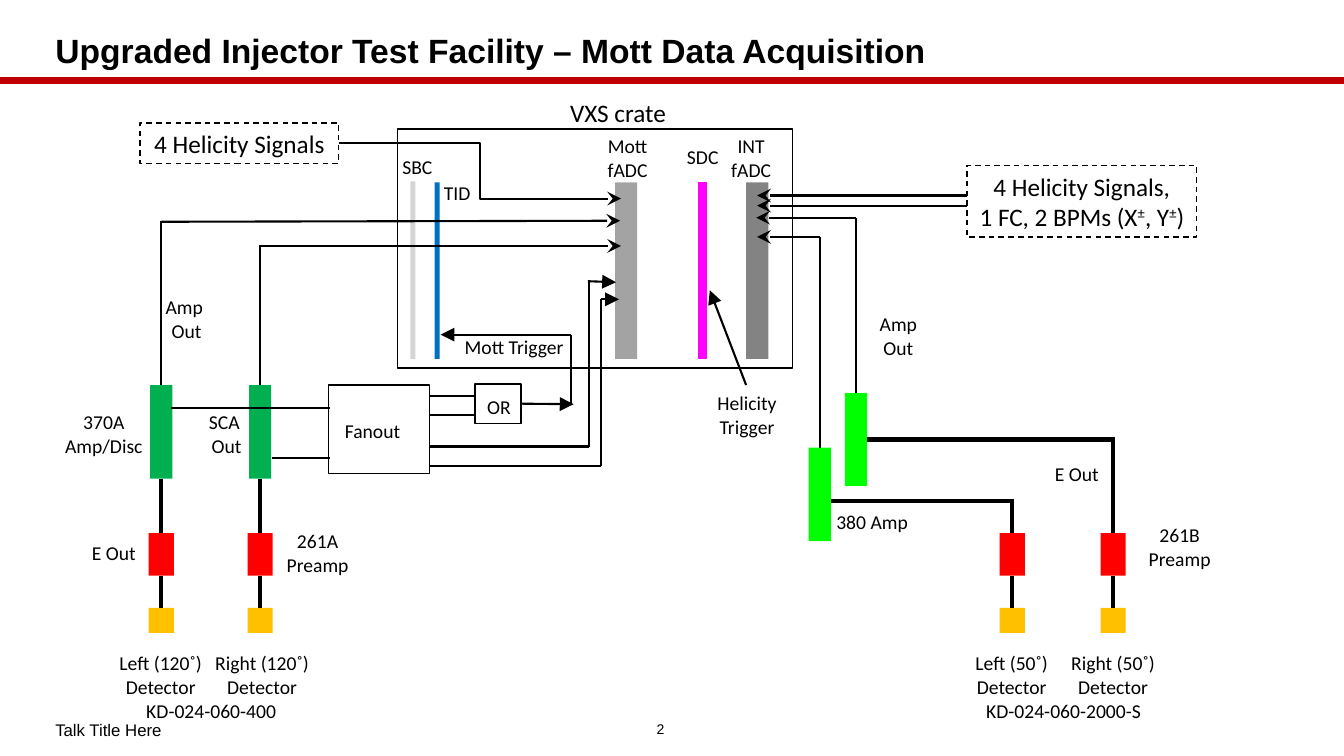
"""Build the Mott data acquisition wiring slide."""
from lxml.etree import SubElement
from pptx import Presentation
from pptx.dml.color import RGBColor
from pptx.enum.dml import MSO_LINE
from pptx.enum.shapes import MSO_CONNECTOR, MSO_SHAPE
from pptx.enum.text import MSO_ANCHOR, PP_ALIGN
from pptx.oxml.ns import qn
from pptx.util import Inches, Pt

TITLE = "Upgraded Injector Test Facility – Mott Data Acquisition"
COLORS = {
    "black": "000000", "rule": "C00000", "gold": "FFC000", "red": "FF0000",
    "green": "00B050", "lime": "00FF00", "pale": "D5D5D5", "gray": "A3A3A3",
    "dark": "838383", "blue": "0070C0", "pink": "FF00FF",
}
TOP, RIGHT, BOTTOM = 0, 3, 2

CENTERS = [1.6, 2.58, 10.04, 11.04]
BOXES = {
    "crate": (3.94, 1.28, 3.92, 2.37, None),
    "sbc": (4.07, 1.8, 0.05, 1.76, "pale"),
    "tid": (4.31, 1.81, 0.05, 1.75, "blue"),
    "mott": (6.1, 1.81, 0.22, 1.75, "gray"),
    "sdc": (6.93, 1.81, 0.08, 1.75, "pink"),
    "int": (7.4, 1.81, 0.22, 1.75, "dark"),
    "fanout": (3.26, 3.82, 1, 0.88, None),
    "or": (4.71, 3.81, 0.46, 0.39, None),
    "disc0": (1.49, 3.82, 0.22, 0.93, "green"),
    "disc1": (2.47, 3.82, 0.22, 0.93, "green"),
    "amp2": (8.02, 4.44, 0.22, 0.93, "lime"),
    "amp3": (8.38, 3.9, 0.22, 0.92, "lime"),
}
for i, x in enumerate(CENTERS):
    BOXES[f"pre{i}"] = (x - 0.125, 5.29, 0.25, 0.42, "red")
    BOXES[f"det{i}"] = (x - 0.125, 6.03, 0.25, 0.25, "gold")

SIGNALS = {
    "helicity": (1.39, 1.22, 1.97, 0.4, "4 Helicity Signals"),
    "beam": (9.59, 1.64, 2.28, 0.71,
             "4 Helicity Signals,\n1 FC, 2 BPMs (X±, Y±)"),
}
LABELS = [
    (3.89, 1.49, 0.5, "SBC"), (4.3, 1.75, 0.47, "TID"),
    (5.92, 1.28, 0.61, "Mott\nfADC"), (6.71, 1.39, 0.52, "SDC"),
    (7.14, 1.28, 0.62, "INT\nfADC"), (4.48, 3.27, 1.24, "Mott Trigger"),
    (7.01, 3.83, 0.8, "Helicity\nTrigger"), (3.29, 4.11, 0.81, "Fanout"),
    (4.7, 3.87, 0.5, "OR"), (1.54, 2.88, 0.62, "Amp \nOut"),
    (0.54, 4.02, 0.98, "370A\nAmp/Disc"), (1.95, 4.02, 0.55, "SCA\n Out"),
    (0.81, 5.32, 0.64, "E Out"), (2.74, 5.2, 0.82, "261A\nPreamp"),
    (8.62, 3.05, 0.58, "Amp\nOut"), (8.19, 5.01, 0.92, "380 Amp"),
    (10.33, 4.53, 0.7, "E Out"), (11.29, 5.14, 0.82, "261B\nPreamp"),
    (1.08, 6.41, 1.03, "Left (120˚)\nDetector"),
    (2.03, 6.41, 1.14, "Right (120˚)\nDetector"),
    (9.57, 6.41, 0.93, "Left (50˚)\nDetector"),
    (10.52, 6.41, 1.04, "Right (50˚)\nDetector"),
    (1.34, 6.88, 1.51, "KD-024-060-400"),
    (9.67, 6.88, 1.76, "KD-024-060-2000-S"),
]

THICK = [((f"pre{i}", BOTTOM), (f"det{i}", TOP)) for i in range(4)]
THICK += [((f"disc{i}", BOTTOM), (f"pre{i}", TOP)) for i in range(2)]
THICK += [
    (("amp3", RIGHT), (11.04, 4.36)), ((11.04, 4.34), ("pre3", TOP)),
    ((8.24, 4.97), (10.04, 4.97)), ((10.04, 4.95), ("pre2", TOP)),
]
THIN = [
    (("disc0", TOP), (1.6, 2.19)), (("disc1", TOP), (2.58, 2.44)),
    (("amp2", TOP), (8.13, 2.35)), (("amp3", TOP), (8.49, 2.16)),
    ((1.7, 4.05), (3.27, 4.05)), ((2.7, 4.54), (3.27, 4.54)),
    ((4.27, 3.93), (4.71, 3.93)), ((4.27, 4.12), (4.71, 4.12)),
    ((4.27, 4.43), (5.84, 4.43)), ((5.84, 4.43), (5.84, 2.79)),
    ((4.27, 4.62), (5.96, 4.62)), ((5.96, 4.62), (5.96, 2.97)),
    ((5.66, 4), (5.66, 3.32)),
]
STEALTH = [
    ((1.6, 2.2), (6.15, 2.19)), ((2.57, 2.44), (6.16, 2.44)),
    ((9.59, 1.94), (7.51, 1.94)), ((9.59, 2.04), (7.51, 2.04)),
    ((8.49, 2.16), (7.5, 2.16)), ((8.13, 2.35), (7.51, 2.35)),
]
SOLID = [
    ((5.66, 3.32), (4.37, 3.32)), (("or", RIGHT), (5.69, 4.01)),
    ((5.83, 2.79), (6.11, 2.8)), ((5.96, 2.97), (6.14, 2.97)),
    ((7.4, 3.82), (7.04, 2.88)),
]
WIRES = [(THICK, 3, None), (THIN, 1.5, None),
         (STEALTH, 1.5, "stealth"), (SOLID, 1.5, "triangle")]

deck = Presentation()
deck.slide_width, deck.slide_height = Inches(13.33), Inches(7.5)
slide = deck.slides.add_slide(deck.slide_layouts[5])
shapes = slide.shapes
nodes = {}


def tint(name):
    return RGBColor.from_string(COLORS[name])


def style(run, size, face):
    run.font.size, run.font.name = Pt(size), face
    run.font.color.rgb = tint("black")


def write(frame, text, size, face="Calibri", align=PP_ALIGN.CENTER):
    frame.text = text
    for para in frame.paragraphs:
        para.alignment = align
        line = para.text
        if "±" in line:
            para.clear()
            for part in line.replace("±", "|±|").split("|"):
                run = para.add_run()
                run.text = part
                if part == "±":
                    run._r.get_or_add_rPr().set("baseline", "30000")
        for run in para.runs:
            style(run, size, face)


def add_box(name, x, y, w, h, fill):
    box = shapes.add_shape(MSO_SHAPE.RECTANGLE, *map(Inches, (x, y, w, h)))
    box.shadow.inherit = False
    if fill:
        box.fill.solid()
        box.fill.fore_color.rgb = tint(fill)
    else:
        box.fill.background()
    if fill in (None, "pink"):
        box.line.color.rgb = tint(fill or "black")
        box.line.width = Pt(1)
    else:
        box.line.fill.background()
    nodes[name] = box
    return box


def add_text(x, y, w, h, text, size, **kind):
    box = shapes.add_textbox(*map(Inches, (x, y, w, h)))
    box.text_frame.word_wrap = False
    write(box.text_frame, text, size, **kind)
    return box


def add_wire(start, end, width, head=None, color="black",
             kind=MSO_CONNECTOR.STRAIGHT):
    ends = [(0, 0) if isinstance(p[0], str) else p for p in (start, end)]
    wire = shapes.add_connector(kind, *(Inches(v) for p in ends for v in p))
    for point, join in ((start, wire.begin_connect), (end, wire.end_connect)):
        if isinstance(point[0], str):
            join(nodes[point[0]], point[1])
    wire.line.color.rgb = tint(color)
    wire.line.width = Pt(width)
    if head:
        SubElement(wire.line._get_or_add_ln(), qn("a:tailEnd"),
                   type=head, w="lg", len="lg")
    SubElement(wire._element.spPr, qn("a:effectLst"))


title = shapes.title
title.left, title.top = Inches(0.45), Inches(0.26)
title.width, title.height = Inches(12.34), Inches(0.53)
write(title.text_frame, TITLE, 24, "Arial", PP_ALIGN.LEFT)
title.text_frame.vertical_anchor = MSO_ANCHOR.MIDDLE
title.text_frame.paragraphs[0].line_spacing = 0.9
title.text_frame.paragraphs[0].runs[0].font.bold = True
add_wire((0, 0.8), (13.33, 0.8), 4.5, color="rule")

for name, spec in BOXES.items():
    add_box(name, *spec)
for name, (*place, text) in SIGNALS.items():
    box = add_box(name, *place, None)
    box.line.dash_style = MSO_LINE.DASH
    box.text_frame.word_wrap = False
    write(box.text_frame, text, 18)

for wires, width, head in WIRES:
    for start, end in wires:
        add_wire(start, end, width, head)
add_wire(("helicity", RIGHT), (6.16, 1.97), 1.5, "stealth",
         kind=MSO_CONNECTOR.ELBOW)

add_text(5.55, 0.92, 1.16, 0.4, "VXS crate", 18)
for x, y, w, text in LABELS:
    add_text(x, y, w, 0.57 if "\n" in text else 0.34, text, 14)
foot = add_text(0.45, 7.07, 5.71, 0.34, "Talk Title Here", 12,
                face="Arial", align=PP_ALIGN.LEFT)
page = add_text(6.16, 7.07, 0.78, 0.33, "2", 10, face="Arial")
for box in (foot, page):
    box.text_frame.word_wrap = True
    box.text_frame.vertical_anchor = MSO_ANCHOR.MIDDLE

deck.save("out.pptx")
